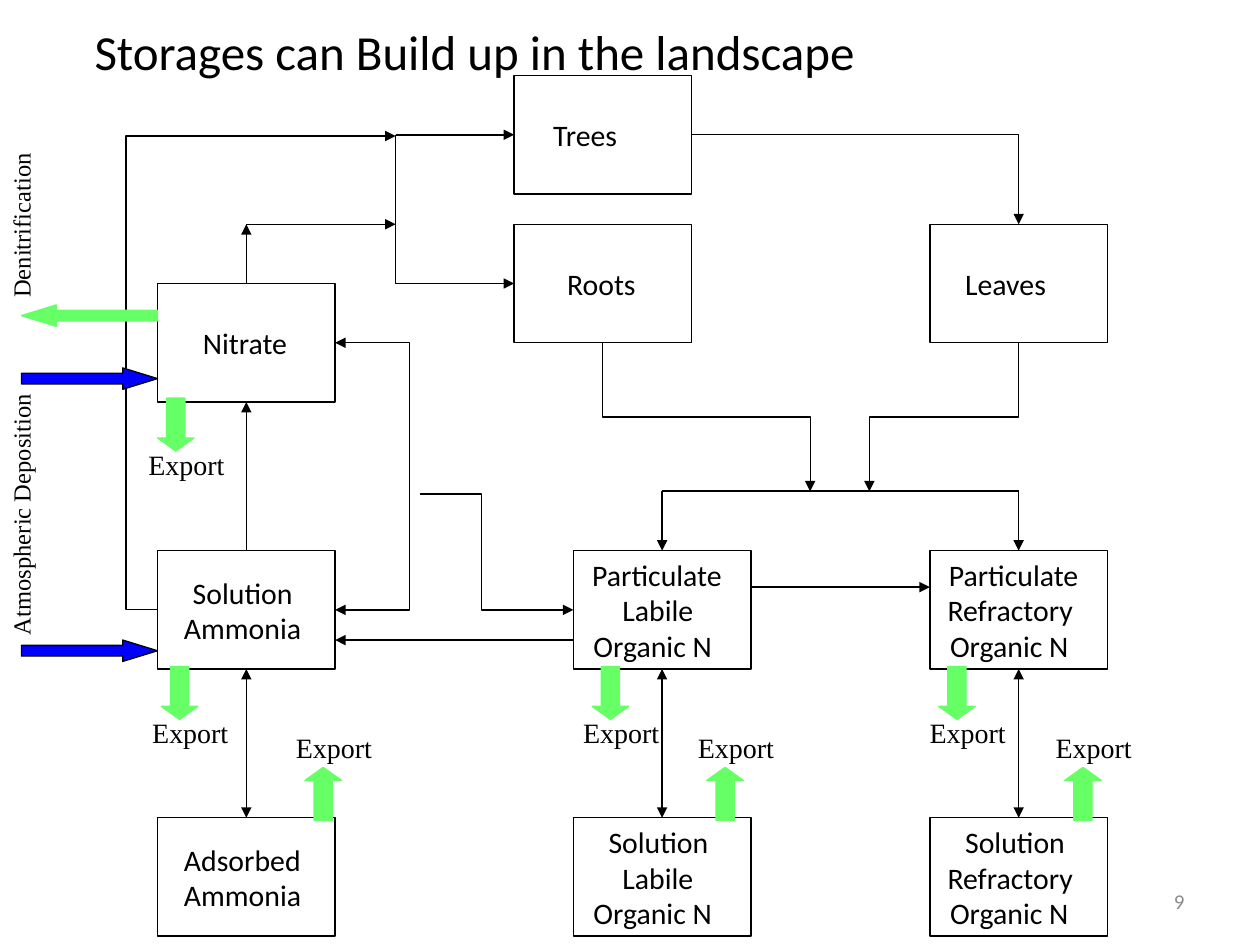
from dataclasses import dataclass
from typing import Any, NamedTuple, Optional

from lxml.etree import SubElement
from pptx import Presentation
from pptx.dml.color import RGBColor
from pptx.enum.shapes import MSO_CONNECTOR, MSO_SHAPE
from pptx.enum.text import MSO_ANCHOR, MSO_AUTO_SIZE, PP_ALIGN
from pptx.oxml.ns import qn
from pptx.util import Inches, Pt


@dataclass(frozen=True)
class Theme:
    """Colours, fonts and type sizes of the slide."""
    ink: str = "000000"
    paper: str = "FFFFFF"
    grey: str = "8C8C8C"
    blue: str = "0000FF"
    green: str = "66FF66"
    sans: str = "Calibri"
    serif: str = "Times New Roman"
    head: int = 28
    label: int = 17
    flow: int = 16
    side: int = 14
    page: int = 12
    thin: float = 0.75
    thick: float = 1.25


class Line(NamedTuple):
    """One line of a label, set in from the left edge of its box."""
    text: str
    dx: float
    width: float


class Box(NamedTuple):
    """A storage box and its label."""
    name: str
    left: float
    top: float
    lines: tuple[Line, ...]


class Link(NamedTuple):
    """A straight line, joined to boxes where a name and side are given."""
    start: tuple[float, float]
    end: tuple[float, float]
    tail: Optional[tuple[str, int]] = None
    tip: Optional[tuple[str, int]] = None
    heads: tuple[str, ...] = ("tailEnd",)
    width: float = 0.75


class Route(NamedTuple):
    """A line with corners."""
    points: tuple[tuple[float, float], ...]
    heads: tuple[str, ...] = ("tailEnd",)


class Export(NamedTuple):
    """A labelled arrow that leaves a box."""
    left: float
    top: float
    up: bool = False


class Flow(NamedTuple):
    """A long arrow at the left edge."""
    top: float
    kind: Any
    fill: str
    edge: str


THEME = Theme()
WIDE, HIGH, STEP = 1.41, 0.94, 0.28
WEST, MID, EAST = 1.25, 4.55, 7.38
WEST_X, MID_X, EAST_X = (x + WIDE / 2 for x in (WEST, MID, EAST))
ROW, BASE = 4.37, 6.49
FOOT = ROW + HIGH
TREE_Y, FORK_X, BAR_Y, BEND_Y = 1.07, 3.14, 3.9, 3.31
BOTH = ("headEnd", "tailEnd")

MATTER = Line("Particulate", 0.15, 1.12)
LABILE = Line("Labile", 0.39, 0.63)
HARD = Line("Refractory", 0.14, 1.09)
AMMO = Line("Ammonia", 0.21, 1.0)
SOLUTE = Line("Solution", 0.28, 0.86)
ORGANIC = Line("Organic N", 0.16, 1.06)

BOXES = (
    Box("trees", 4.08, 0.6, (Line("Trees", 0.31, 0.6),)),
    Box("roots", 4.08, 1.78, (Line("Roots", 0.42, 0.62),)),
    Box("leaves", EAST, 1.78, (Line("Leaves", 0.28, 0.76),)),
    Box("nitrate", WEST, 2.25, (Line("Nitrate", 0.36, 0.7),)),
    Box("hard", EAST, ROW, (MATTER, HARD, ORGANIC)),
    Box("labile", MID, ROW, (MATTER, LABILE, ORGANIC)),
    Box("ammo", WEST, ROW, (SOLUTE, AMMO)),
    Box("sunk", WEST, BASE, (Line("Adsorbed", 0.21, 1.01), AMMO)),
    Box("wet labile", MID, BASE, (SOLUTE, LABILE, ORGANIC)),
    Box("wet hard", EAST, BASE, (SOLUTE, HARD, ORGANIC)),
)
LINKS = (
    Link((MID + WIDE, 4.66), (EAST, 4.66)),
    Link((MID, 5.08), (WEST + WIDE, 5.08)),
    Link((WEST_X, ROW), (WEST_X, 3.19), ("ammo", 0), ("nitrate", 2)),
    Link((WEST_X, 2.25), (WEST_X, 1.78), ("nitrate", 0)),
    Link((WEST_X, 1.78), (FORK_X, 1.78)),
    Link((FORK_X, TREE_Y), (4.08, TREE_Y), None, ("trees", 1), width=THEME.thick),
    Link((MID_X, BAR_Y), (EAST_X, BAR_Y), heads=(), width=THEME.thick),
    Link((MID_X, BAR_Y), (MID_X, ROW), None, ("labile", 0)),
    Link((EAST_X, BAR_Y), (EAST_X, ROW), None, ("hard", 0)),
    Link((WEST_X, FOOT), (WEST_X, BASE), ("ammo", 2), ("sunk", 0), BOTH),
    Link((MID_X, FOOT), (MID_X, BASE), ("labile", 2), ("wet labile", 0), BOTH),
    Link((EAST_X, FOOT), (EAST_X, BASE), ("hard", 2), ("wet hard", 0), BOTH),
)
ROUTES = (
    Route(((3.33, 3.92), (3.82, 3.92), (3.82, 4.84), (MID, 4.84))),
    Route(((FORK_X, TREE_Y), (FORK_X, 2.25), (4.08, 2.25))),
    Route(((EAST_X, 2.72), (EAST_X, BEND_Y), (6.9, BEND_Y), (6.9, BAR_Y))),
    Route(((4.78, 2.72), (4.78, BEND_Y), (6.43, BEND_Y), (6.43, BAR_Y))),
    Route(((5.49, TREE_Y), (EAST_X, TREE_Y), (EAST_X, 1.78))),
    Route(((2.66, 2.72), (3.25, 2.72), (3.25, 4.84), (2.66, 4.84)), BOTH),
    Route(((WEST, 4.84), (1, 4.84), (1, 1.08), (FORK_X, 1.08))),
)
FLOWS = (
    Flow(5.08, MSO_SHAPE.RIGHT_ARROW, THEME.blue, THEME.ink),
    Flow(2.92, MSO_SHAPE.RIGHT_ARROW, THEME.blue, THEME.ink),
    Flow(2.42, MSO_SHAPE.LEFT_ARROW, THEME.green, THEME.green),
)
EXPORTS = (
    Export(1.08, 3.16), Export(1.11, 5.29), Export(4.53, 5.29), Export(7.28, 5.29),
    Export(2.25, 6.09, True), Export(5.44, 6.09, True), Export(8.28, 6.09, True),
)


def write(shape: Any, text: str, size: int, font: str, color: str = THEME.ink,
          align: Any = PP_ALIGN.LEFT, inset: Optional[float] = None) -> None:
    """Set and format one unwrapped line of text."""
    frame = shape.text_frame
    frame.text = text
    frame.word_wrap = False
    frame.auto_size = MSO_AUTO_SIZE.NONE
    frame.vertical_anchor = MSO_ANCHOR.TOP
    if inset is not None:
        frame.margin_left = frame.margin_right = Inches(inset)
        frame.margin_top = frame.margin_bottom = Inches(inset)
    para = frame.paragraphs[0]
    para.alignment = align
    face = para.runs[0].font
    face.size, face.name = Pt(size), font
    face.color.rgb = RGBColor.from_string(color)


def add_text(shapes: Any, area: tuple[float, ...], *args: Any, **opts: Any) -> Any:
    """Add a text box."""
    shape = shapes.add_textbox(*map(Inches, area))
    write(shape, *args, **opts)
    return shape


def add_solid(shapes: Any, kind: Any, area: tuple[float, ...], fill: str, edge: str) -> Any:
    """Add a flat filled shape."""
    shape = shapes.add_shape(kind, *map(Inches, area))
    shape.shadow.inherit = False
    shape.fill.solid()
    shape.fill.fore_color.rgb = RGBColor.from_string(fill)
    shape.line.color.rgb = RGBColor.from_string(edge)
    shape.line.width = Pt(THEME.thin)
    return shape


def ink(shape: Any, width: float, heads: tuple[str, ...]) -> None:
    """Colour a line and give it arrowheads."""
    shape.line.color.rgb = RGBColor.from_string(THEME.ink)
    shape.line.width = Pt(width)
    for head in heads:
        SubElement(shape.element.spPr.find(qn("a:ln")), qn(f"a:{head}"), type="triangle")


def add_box(shapes: Any, box: Box) -> Any:
    """Draw a box with its label lines centred in its height."""
    shape = add_solid(shapes, MSO_SHAPE.RECTANGLE, (box.left, box.top, WIDE, HIGH),
                      THEME.paper, THEME.ink)
    first = box.top + (HIGH - STEP * len(box.lines)) / 2
    for row, line in enumerate(box.lines):
        area = (box.left + line.dx, first + row * STEP, line.width, STEP)
        add_text(shapes, area, line.text, THEME.label, THEME.sans, inset=0)
    return shape


def add_link(shapes: Any, link: Link, made: dict[str, Any]) -> None:
    """Draw a straight line."""
    wire = shapes.add_connector(MSO_CONNECTOR.STRAIGHT, *map(Inches, link.start + link.end))
    if link.tail:
        wire.begin_connect(made[link.tail[0]], link.tail[1])
    if link.tip:
        wire.end_connect(made[link.tip[0]], link.tip[1])
    ink(wire, link.width, link.heads)
    SubElement(wire.element.spPr, qn("a:effectLst"))


def add_route(shapes: Any, route: Route) -> None:
    """Draw a line with corners."""
    first, *rest = [(Inches(x), Inches(y)) for x, y in route.points]
    pen = shapes.build_freeform(*first)
    pen.add_line_segments(rest, close=False)
    shape = pen.convert_to_shape()
    shape.shadow.inherit = False
    shape.fill.background()
    ink(shape, THEME.thin, route.heads)


def add_flow(shapes: Any, flow: Flow) -> None:
    """Draw a long arrow at the left edge."""
    shape = add_solid(shapes, flow.kind, (0.17, flow.top, 1.08, 0.17), flow.fill, flow.edge)
    shape.adjustments[1] = 1.625


def add_export(shapes: Any, item: Export) -> None:
    """Draw an export arrow grouped with its word."""
    group = shapes.add_group_shape().shapes
    kind = MSO_SHAPE.UP_ARROW if item.up else MSO_SHAPE.DOWN_ARROW
    arrow = add_solid(group, kind, (item.left + 0.17, item.top, 0.29, 0.42),
                      THEME.green, THEME.green)
    arrow.adjustments[1] = 0.357
    top = item.top + (-0.34 if item.up else 0.34)
    add_text(group, (item.left, top, 0.81, 0.37), "Export", THEME.flow, THEME.serif)


def main() -> None:
    """Build and save the slide."""
    deck = Presentation()
    deck.slide_width, deck.slide_height = Inches(10), Inches(7.5)
    slide = deck.slides.add_slide(deck.slide_layouts[5])
    shapes = slide.shapes
    made = {box.name: add_box(shapes, box) for box in BOXES}
    title = shapes.title
    title.left, title.top, title.width, title.height = map(Inches, (0.75, 0.17, 6.19, 0.47))
    write(title, "Storages can Build up in the landscape", THEME.head, THEME.sans, inset=0)
    title.element.getparent().append(title.element)
    for link in LINKS:
        add_link(shapes, link, made)
    for route in ROUTES:
        add_route(shapes, route)
    for text, top, height in (("Atmospheric Deposition", 3.08, 2.01),
                              ("Denitrification", 1.17, 1.24)):
        side = add_text(shapes, (0, top, 0.43, height), text, THEME.side, THEME.serif,
                        align=PP_ALIGN.CENTER)
        side.text_frame._txBody.bodyPr.set("vert", "vert270")
    for flow in FLOWS:
        add_flow(shapes, flow)
    for item in EXPORTS:
        add_export(shapes, item)
    page = add_text(shapes, (7.17, 6.95, 2.33, 0.4), "9", THEME.page, THEME.sans,
                    THEME.grey, PP_ALIGN.RIGHT)
    page.text_frame.vertical_anchor = MSO_ANCHOR.MIDDLE
    deck.save("out.pptx")


if __name__ == "__main__":
    main()
